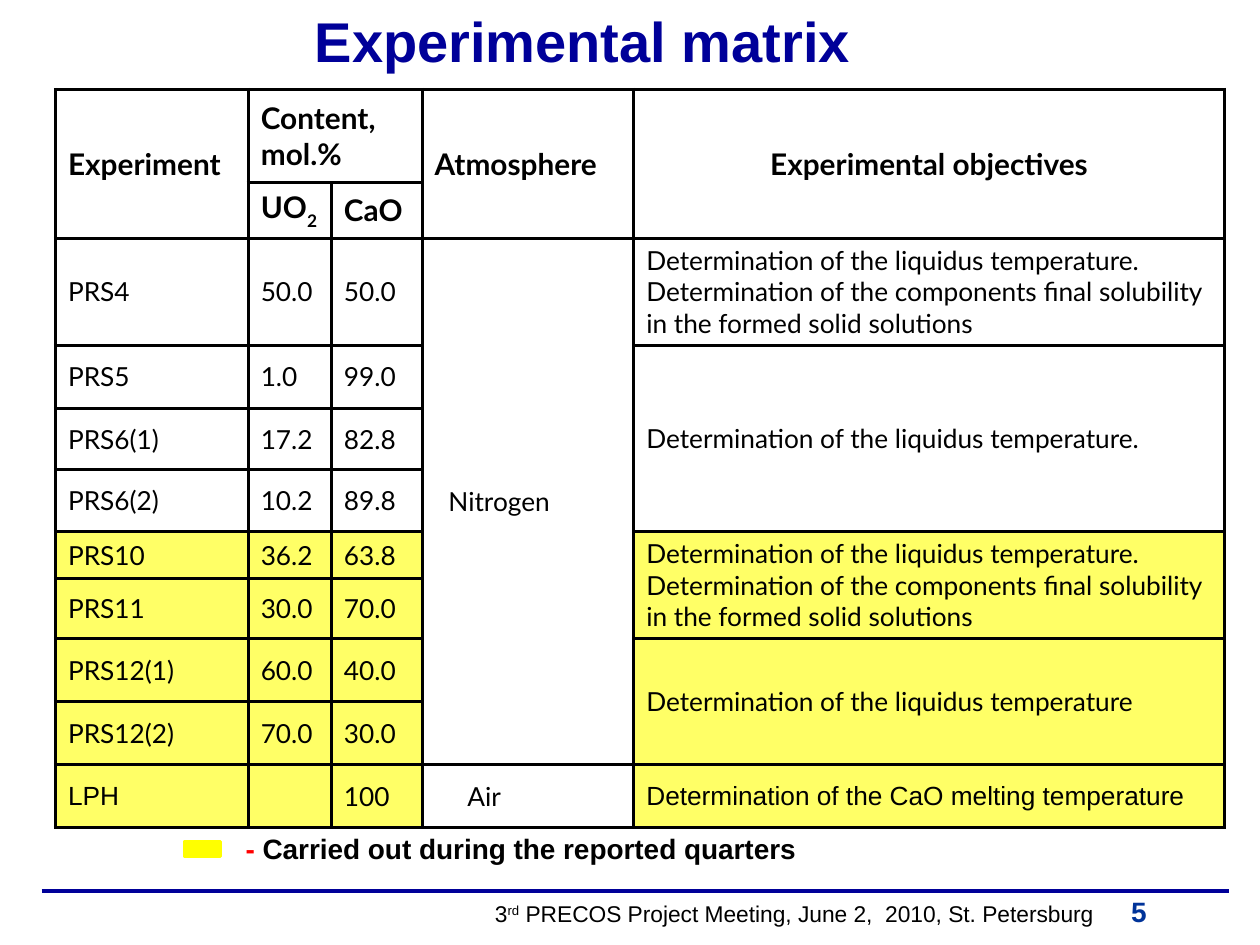
from lxml.etree import SubElement
from pptx import Presentation
from pptx.dml.color import RGBColor
from pptx.enum.shapes import MSO_CONNECTOR, MSO_SHAPE
from pptx.enum.text import MSO_ANCHOR, PP_ALIGN
from pptx.oxml.ns import qn
from pptx.util import Inches, Pt

BLACK = RGBColor(0, 0, 0)
NAVY = RGBColor(0, 0, 0x99)
BLUE = RGBColor(0, 0x33, 0x99)
RED = RGBColor(0xFF, 0, 0)
YELLOW = RGBColor(0xFF, 0xFF, 0)
PALE_YELLOW = RGBColor(0xFF, 0xFF, 0x66)

COLUMNS = [1.53, 0.66, 0.72, 1.68, 4.69]
ROWS = [0.74, 0.44, 0.85, 0.5, 0.49, 0.49, 0.37, 0.48, 0.5, 0.5, 0.5]
LIQUIDUS = "Determination of the liquidus temperature"
SOLUBILITY = (LIQUIDUS + ". Determination of the components final "
              "solubility in the formed solid solutions")
HEADER = [
    ["Experiment", "Content, mol.%", "", "Atmosphere", "Experimental objectives"],
    ["", "UO", "CaO", "", ""],
]
EXPERIMENTS = [
    ["PRS4", "50.0", "50.0", "Nitrogen", SOLUBILITY],
    ["PRS5", "1.0", "99.0", "", LIQUIDUS + "."],
    ["PRS6(1)", "17.2", "82.8", "", ""],
    ["PRS6(2)", "10.2", "89.8", "", ""],
    ["PRS10", "36.2", "63.8", "", SOLUBILITY],
    ["PRS11", "30.0", "70.0", "", ""],
    ["PRS12(1)", "60.0", "40.0", "", LIQUIDUS],
    ["PRS12(2)", "70.0", "30.0", "", ""],
    ["LPH", "", "100", "Air", "Determination of the CaO melting temperature"],
]
MERGES = [(0, 0, 1, 0), (0, 1, 0, 2), (0, 3, 1, 3), (0, 4, 1, 4),
          (2, 3, 9, 3), (3, 4, 5, 4), (6, 4, 7, 4), (8, 4, 9, 4)]
INDENTS = {"Nitrogen": 0.11, "Air": 0.26}
FIRST_REPORTED, LAST_ROW, ATMOSPHERE = 6, 10, 3


def add_span(para, text, size, color=BLACK, bold=False, name="Arial", baseline=0):
    span = para.add_run()
    span.text = text
    span.font.size = Pt(size)
    span.font.name = name
    span.font.bold = bold
    span.font.color.rgb = color
    if baseline:
        span.font._element.set("baseline", str(baseline * 1000))


def add_text_box(page, left, top, width, height, wrap=True):
    box = page.shapes.add_textbox(Inches(left), Inches(top), Inches(width), Inches(height))
    box.text_frame.word_wrap = wrap
    return box.text_frame


def add_title(page, left, top, width, height):
    frame = add_text_box(page, left, top, width, height)
    add_span(frame.paragraphs[0], "Experimental matrix", 32, NAVY, True)


def merged_area(row, column):
    for top, left, bottom, right in MERGES:
        if top <= row <= bottom and left <= column <= right:
            return top, left, bottom, right
    return row, column, row, column


def add_borders(cell, row, column):
    top, left, bottom, right = merged_area(row, column)
    thin_top = row == LAST_ROW and column >= ATMOSPHERE
    thin_bottom = row == LAST_ROW - 1 and column >= ATMOSPHERE
    edges = [("lnL", column == left, 2), ("lnR", column == right, 2),
             ("lnT", row == top, 1 if thin_top else 2),
             ("lnB", row == bottom, 1 if thin_bottom else 2)]
    properties = cell._tc.get_or_add_tcPr()
    for tag, outer, width in edges:
        if outer:
            line = SubElement(properties, qn("a:" + tag), w=str(Pt(width)))
            fill = SubElement(line, qn("a:solidFill"))
            SubElement(fill, qn("a:srgbClr"), val=str(BLACK))


def fill_cell(cell, text, row, column):
    add_borders(cell, row, column)
    if row >= FIRST_REPORTED and column != ATMOSPHERE:
        cell.fill.solid()
        cell.fill.fore_color.rgb = PALE_YELLOW
    else:
        cell.fill.background()
    cell.vertical_anchor = MSO_ANCHOR.MIDDLE
    cell.margin_left = cell.margin_right = Inches(0.1)
    cell.margin_top = cell.margin_bottom = Inches(0.05)
    if not text:
        return
    para = cell.text_frame.paragraphs[0]
    is_header = row < len(HEADER)
    size = 17 if is_header else 15
    name = "Arial" if row == LAST_ROW and column in (0, 4) else "Lato"
    if is_header and column == 4:
        para.alignment = PP_ALIGN.CENTER
    if text in INDENTS:
        para._p.get_or_add_pPr().set("marL", str(Inches(INDENTS[text])))
    add_span(para, text, size, bold=is_header, name=name)
    if text == "UO":
        add_span(para, "2", size, bold=True, name=name, baseline=-30)


def add_matrix(page, left, top):
    table = page.shapes.add_table(
        len(ROWS), len(COLUMNS), Inches(left), Inches(top),
        Inches(sum(COLUMNS)), Inches(sum(ROWS))).table
    table.first_row = table.horz_banding = False
    for column, width in zip(table.columns, COLUMNS):
        column.width = Inches(width)
    for row, height in zip(table.rows, ROWS):
        row.height = Inches(height)
    for first_row, first_column, last_row, last_column in MERGES:
        table.cell(first_row, first_column).merge(table.cell(last_row, last_column))
    for row, texts in enumerate(HEADER + EXPERIMENTS):
        for column, text in enumerate(texts):
            fill_cell(table.cell(row, column), text, row, column)


def add_legend(page, left, top):
    swatch = page.shapes.add_shape(
        MSO_SHAPE.RECTANGLE, Inches(left), Inches(top + 0.13), Inches(0.29), Inches(0.12))
    swatch.shadow.inherit = False
    swatch.fill.solid()
    swatch.fill.fore_color.rgb = YELLOW
    swatch.line.color.rgb = YELLOW
    swatch.line.width = Pt(1.5)
    para = add_text_box(page, left + 0.39, top, 4.59, 0.37, wrap=False).paragraphs[0]
    add_span(para, "- ", 16, RED, True)
    add_span(para, "Carried out during the reported quarters", 16, bold=True)


def add_footer(page, left, top, width):
    rule = page.shapes.add_connector(
        MSO_CONNECTOR.STRAIGHT, Inches(left), Inches(top), Inches(left + width), Inches(top))
    rule.line.color.rgb = NAVY
    rule.line.width = Pt(2.25)
    SubElement(rule._element.spPr, qn("a:effectLst"))
    frame = add_text_box(page, left + 3.5, top - 0.1, 5.8, 0.53, wrap=False)
    frame.vertical_anchor = MSO_ANCHOR.MIDDLE
    para = frame.paragraphs[0]
    tabs = SubElement(para._p.get_or_add_pPr(), qn("a:tabLst"))
    SubElement(tabs, qn("a:tab"), pos=str(Inches(5.05)), algn="l")
    add_span(para, "3", 13)
    add_span(para, "rd", 13, baseline=30)
    add_span(para, " PRECOS Project Meeting, June 2,  2010, St. Petersburg\t", 13)
    add_span(para, "5", 16, BLUE, True)


def main():
    deck = Presentation()
    deck.slide_width, deck.slide_height = Inches(10), Inches(7.5)
    page = deck.slides.add_slide(deck.slide_layouts[6])
    add_footer(page, 0.33, 7.07, 9.42)
    add_matrix(page, 0.44, 0.71)
    add_title(page, 2.4, 0, 4.65, 0.63)
    add_legend(page, 1.46, 6.55)
    deck.save("out.pptx")


if __name__ == "__main__":
    main()
